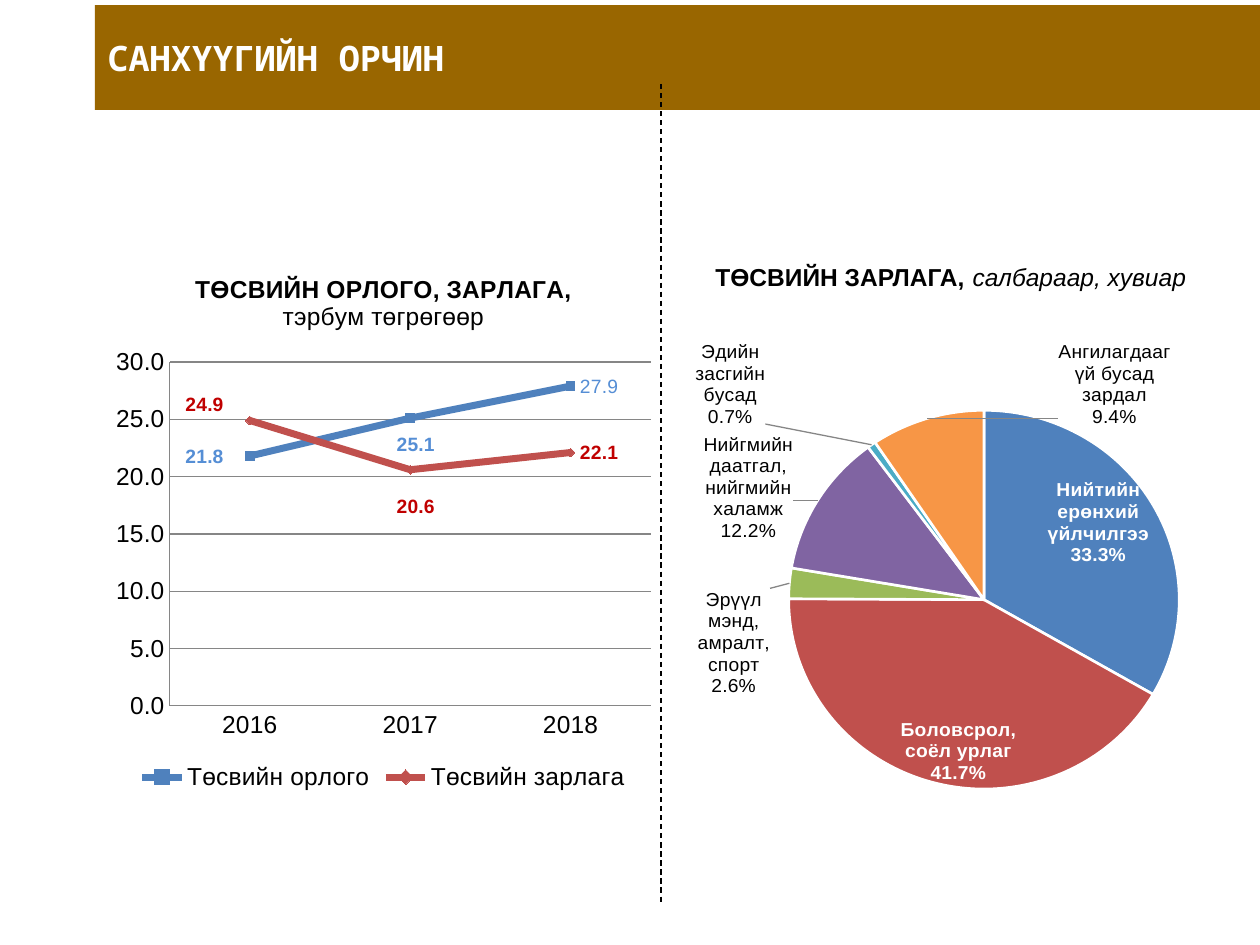
from lxml import etree
from pptx import Presentation
from pptx.chart.data import CategoryChartData
from pptx.dml.color import RGBColor
from pptx.enum.chart import XL_CHART_TYPE as ChartType, XL_LEGEND_POSITION as LegendPosition
from pptx.enum.chart import XL_MARKER_STYLE as Marker, XL_TICK_MARK as TickMark
from pptx.enum.dml import MSO_LINE_DASH_STYLE as Dash
from pptx.enum.shapes import MSO_CONNECTOR as Connector
from pptx.enum.text import MSO_ANCHOR as Anchor, MSO_AUTO_SIZE as AutoSize, PP_ALIGN as Align
from pptx.oxml import parse_xml
from pptx.oxml.ns import nsdecls, qn
from pptx.util import Emu, Pt

# Content: runs are (text, size, bold, italic)
TITLE = "САНХҮҮГИЙН ОРЧИН"
PIE_HEADING = [("ТӨСВИЙН ЗАРЛАГА,", 14, True, False), (" ", 16, True, False),
               ("салбараар, хувиар", 14, False, True)]
LINE_HEADING = [("ТӨСВИЙН ОРЛОГО, ЗАРЛАГА,", 14, True, False),
                ("тэрбум төгрөгөөр", 14, False, False)]
YEARS = ["2016", "2017", "2018"]
# Labels are (position, x shift, y shift, bold), shifts in shares of the chart
BUDGET = [
    dict(name="Төсвийн орлого", values=[21.8, 25.1, 27.9], color="blue", marker=Marker.SQUARE,
         size=5, text="sky",
         labels=[("l", -0.03, 0, 1), ("b", 0.01, 0.01, 1), ("r", 0, 0, 0)]),
    dict(name="Төсвийн зарлага", values=[24.9, 20.6, 22.1], color="red", marker=Marker.DIAMOND,
         size=5, text="dark red",
         labels=[("l", -0.03, -0.03, 1), ("b", 0.01, 0.03, 1), ("r", 0, 0, 1)]),
]
# Sector, percent, slice colour, label colour, label
SECTORS = [
    ("Нийтийн ерөнхий үйлчилгээ", 33.3, "blue", "white", ("ctr", 0.05, -0.06, 1)),
    ("Боловсрол, соёл урлаг", 41.7, "red", "white", ("ctr", 0, 0.12, 1)),
    ("Эрүүл мэнд, амралт, спорт", 2.6, "green", "black", ("outEnd", -0.02, 0.12, 0)),
    ("Нийгмийн даатгал, нийгмийн халамж", 12.2, "purple", "black", ("outEnd", -0.03, 0.09, 0)),
    ("Эдийн засгийн бусад", 0.7, "teal", "black", ("outEnd", -0.17, -0.03, 0)),
    ("Ангилагдаагүй бусад зардал", 9.4, "orange", "black", ("outEnd", 0.41, 0.03, 0)),
]
PIE_PLOT = dict(x=0.21, y=0.14, w=0.66, h=0.76)

COLORS = {
    "white": "FFFFFF", "black": "000000", "brown": "996600", "dark red": "C00000",
    "sky": "558ED5", "gray": "868686", "blue": "4F81BD", "red": "C0504D",
    "green": "9BBB59", "purple": "8064A2", "teal": "4BACC6", "orange": "F79646",
}
FONT = "Arial"
C15 = "http://schemas.microsoft.com/office/drawing/2012/chart"


def px(count):
    return Emu(round(count * 914400 / 126))


def box(*lengths):
    return [px(length) for length in lengths]


def color(name):
    return RGBColor.from_string(COLORS[name])


def style(font, size, name="black", bold=False, italic=False, face=FONT):
    font.size, font.bold, font.italic, font.name = Pt(size), bold, italic, face
    font.color.rgb = color(name)


def add_run(paragraph, text, *args, **kwargs):
    run = paragraph.add_run()
    run.text = text
    style(run.font, *args, **kwargs)


def add_label(series, index, label, text_color, number_format, percent):
    """Place one point's label, showing its value or its category and percent."""
    position, x, y, bold = label
    label_list = series.data_labels._element
    layout = (f'<c:layout><c:manualLayout><c:x val="{x}"/><c:y val="{y}"/>'
              '</c:manualLayout></c:layout>') if x or y else ""
    item = parse_xml(
        f'<c:dLbl {nsdecls("c", "a")}><c:idx val="{index}"/>{layout}'
        f'<c:numFmt formatCode="{number_format}" sourceLinked="0"/><c:spPr/>'
        f'<c:txPr><a:bodyPr/><a:p><a:pPr><a:defRPr sz="1100" b="{bold}"><a:solidFill>'
        f'<a:srgbClr val="{COLORS[text_color]}"/></a:solidFill><a:latin typeface="{FONT}"/>'
        f'</a:defRPr></a:pPr><a:endParaRPr lang="mn-MN"/></a:p></c:txPr>'
        f'<c:dLblPos val="{position}"/><c:showLegendKey val="0"/>'
        f'<c:showVal val="{1 - percent}"/><c:showCatName val="{percent}"/>'
        f'<c:showSerName val="0"/><c:showPercent val="{percent}"/>'
        '<c:showBubbleSize val="0"/><c:separator>\n</c:separator></c:dLbl>')
    label_list.insert(index, item)


def hide_leader_lines(series):
    label_list = series.data_labels._element
    for switch in label_list.findall(qn("c:showLeaderLines")):
        switch.set("val", "0")
    label_list.append(parse_xml(
        f'<c:extLst {nsdecls("c")}><c:ext uri="{{CE6537A1-D6FC-4f65-9D91-7224C49458BB}}" '
        f'xmlns:c15="{C15}"><c15:showLeaderLines val="0"/></c:ext></c:extLst>'))


def color_leader_lines(series, name):
    series.data_labels._element.append(parse_xml(
        f'<c:leaderLines {nsdecls("c", "a")}><c:spPr><a:ln w="9525"><a:solidFill>'
        f'<a:srgbClr val="{COLORS[name]}"/></a:solidFill></a:ln></c:spPr></c:leaderLines>'))


def add_chart(slide, kind, place, categories, series_list, size):
    data = CategoryChartData(number_format="0.0")
    data.categories = categories
    for name, values in series_list:
        data.add_series(name, values)
    chart = slide.shapes.add_chart(kind, *box(*place), data).chart
    style(chart.font, size)
    chart.plots[0].vary_by_categories = kind == ChartType.PIE
    return chart


def add_budget_chart(slide):
    chart = add_chart(slide, ChartType.LINE_MARKERS, (105, 252, 557, 544), YEARS,
                      [(entry["name"], entry["values"]) for entry in BUDGET], 14)
    frame = chart.chart_title.text_frame
    for index, (text, size, bold, italic) in enumerate(LINE_HEADING):
        paragraph = frame.add_paragraph() if index else frame.paragraphs[0]
        add_run(paragraph, text, size, bold=bold, italic=italic)
    chart.chart_title.include_in_layout = False
    chart.has_legend = True
    chart.legend.position = LegendPosition.BOTTOM
    chart.legend.include_in_layout = False

    # Axes
    value_axis = chart.value_axis
    value_axis.minimum_scale, value_axis.maximum_scale, value_axis.major_unit = 0, 30, 5
    value_axis.tick_labels.number_format = "0.0"
    value_axis.tick_labels.number_format_is_linked = False
    for axis in (chart.category_axis, value_axis):
        axis.major_tick_mark = axis.minor_tick_mark = TickMark.NONE
        axis.format.line.color.rgb = color("gray")
    value_axis.major_gridlines.format.line.color.rgb = color("gray")

    # Series
    for series, entry in zip(chart.plots[0].series, BUDGET):
        series.smooth = False
        series.format.line.width = Pt(4)
        series.format.line.color.rgb = color(entry["color"])
        series.marker.style, series.marker.size = entry["marker"], entry["size"]
        for part in (series.marker.format.fill, series.marker.format.line.fill):
            part.solid()
            part.fore_color.rgb = color(entry["color"])
        series.data_labels.show_value = True
        style(series.data_labels.font, 11, entry["text"], bold=True)
        for index, label in enumerate(entry["labels"]):
            add_label(series, index, label, entry["text"], "0.0", 0)
        hide_leader_lines(series)


def add_sector_chart(slide):
    chart = add_chart(slide, ChartType.PIE, (660, 325, 600, 514),
                      [sector[0] for sector in SECTORS],
                      [("Series 1", [sector[1] for sector in SECTORS])], 11)
    chart.has_title = chart.has_legend = False
    series = chart.plots[0].series[0]
    labels = series.data_labels
    labels.show_category_name = labels.show_percentage = True
    labels.number_format, labels.number_format_is_linked = "0.0%", False
    for index, (_, _, slice_color, text_color, label) in enumerate(SECTORS):
        part = series.points[index].format
        part.fill.solid()
        part.fill.fore_color.rgb = color(slice_color)
        part.line.color.rgb = color("white")
        part.line.width = Pt(1.5)
        add_label(series, index, label, text_color, "0.0%", 1)
    color_leader_lines(series, "gray")

    # Fixed plot area
    plot_area = chart._chartSpace.chart.plotArea
    for old in plot_area.findall(qn("c:layout")):
        plot_area.remove(old)
    sizes = "".join(f'<c:{key} val="{share}"/>' for key, share in PIE_PLOT.items())
    plot_area.insert(0, parse_xml(
        f'<c:layout {nsdecls("c")}><c:manualLayout><c:layoutTarget val="inner"/>'
        f'<c:xMode val="edge"/><c:yMode val="edge"/>{sizes}</c:manualLayout></c:layout>'))


# Slide
presentation = Presentation()
presentation.slide_width, presentation.slide_height = box(1260, 945)
slide = presentation.slides.add_slide(presentation.slide_layouts[5])

# Title band
title = slide.shapes.title
title.left, title.top, title.width, title.height = box(95, 5, 1165, 105)
title.fill.solid()
title.fill.fore_color.rgb = color("brown")
title_frame = title.text_frame
title_frame.auto_size, title_frame.vertical_anchor = AutoSize.NONE, Anchor.MIDDLE
title_frame.paragraphs[0].alignment = Align.JUSTIFY
add_run(title_frame.paragraphs[0], TITLE, 20, "white", bold=True, face="Noto Sans Mono")

# Divider
divider = slide.shapes.add_connector(Connector.STRAIGHT, *box(661, 84, 661, 903))
divider.line.color.rgb = color("black")
divider.line.width, divider.line.dash_style = Pt(0.75), Dash.DASH
etree.SubElement(divider._element.spPr, qn("a:effectLst"))

# Pie heading
heading = slide.shapes.add_textbox(*box(703, 252, 514, 47))
heading.text_frame.word_wrap = True
for text, size, bold, italic in PIE_HEADING:
    add_run(heading.text_frame.paragraphs[0], text, size, bold=bold, italic=italic)

# Charts
add_budget_chart(slide)
add_sector_chart(slide)
presentation.save("out.pptx")
